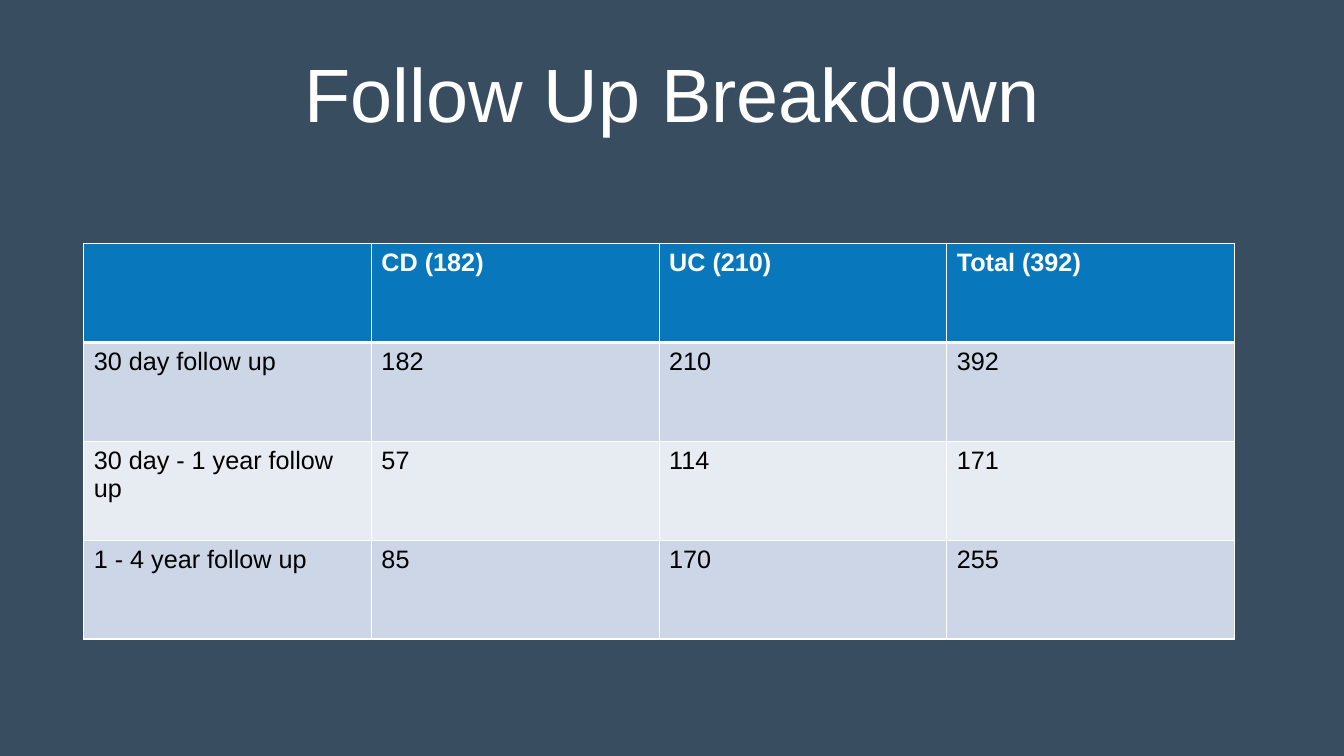
"""Build the Follow Up Breakdown slide with its patient count table."""
from lxml.etree import SubElement
from pptx import Presentation
from pptx.dml.color import RGBColor
from pptx.enum.text import MSO_ANCHOR, PP_ALIGN
from pptx.oxml.ns import qn
from pptx.util import Cm, Pt

WHITE = "FFFFFF"
ROWS = [
    ("", "CD (182)", "UC (210)", "Total (392)"),
    ("30 day follow up", "182", "210", "392"),
    ("30 day - 1 year follow up", "57", "114", "171"),
    ("1 - 4 year follow up", "85", "170", "255"),
]
ROW_FILLS = ["0877BC", "CCD6E7", "E7ECF3", "CCD6E7"]


def paint(fill, color):
    fill.solid()
    fill.fore_color.rgb = RGBColor.from_string(color)


def format_text(p, size, color, bold=False):
    for r in p.runs:
        r.font.name = "Arial"
        r.font.size = Pt(size)
        r.font.bold = bold
        paint(r.font.fill, color)


prs = Presentation()
prs.slide_width, prs.slide_height = Cm(33.87), Cm(19.05)
s = prs.slides.add_slide(prs.slide_layouts[6])
paint(s.background.fill, "384D60")

title = s.shapes.add_textbox(0, Cm(0.64), prs.slide_width, Cm(3.68))
tf = title.text_frame
tf.word_wrap = True
tf.vertical_anchor = MSO_ANCHOR.MIDDLE
p = tf.paragraphs[0]
p.text = "Follow Up Breakdown"
p.alignment = PP_ALIGN.CENTER
p.line_spacing = 0.9
format_text(p, 54, WHITE)

table = s.shapes.add_table(len(ROWS), len(ROWS[0]), Cm(2.11), Cm(6.14), Cm(29), Cm(9.96)).table
for i, row in enumerate(ROWS):
    header = i == 0
    for j, text in enumerate(row):
        cell = table.cell(i, j)
        cell.text = text
        format_text(cell.text_frame.paragraphs[0], 18, WHITE if header else "000000", header)
        tcPr = cell._tc.get_or_add_tcPr()
        for side in "LRTB":
            under_header = (i, side) in [(0, "B"), (1, "T")]
            ln = SubElement(tcPr, qn(f"a:ln{side}"), w=str(Pt(3 if under_header else 1)))
            SubElement(SubElement(ln, qn("a:solidFill")), qn("a:srgbClr"), val=WHITE)
        paint(cell.fill, ROW_FILLS[i])

prs.save("out.pptx")
